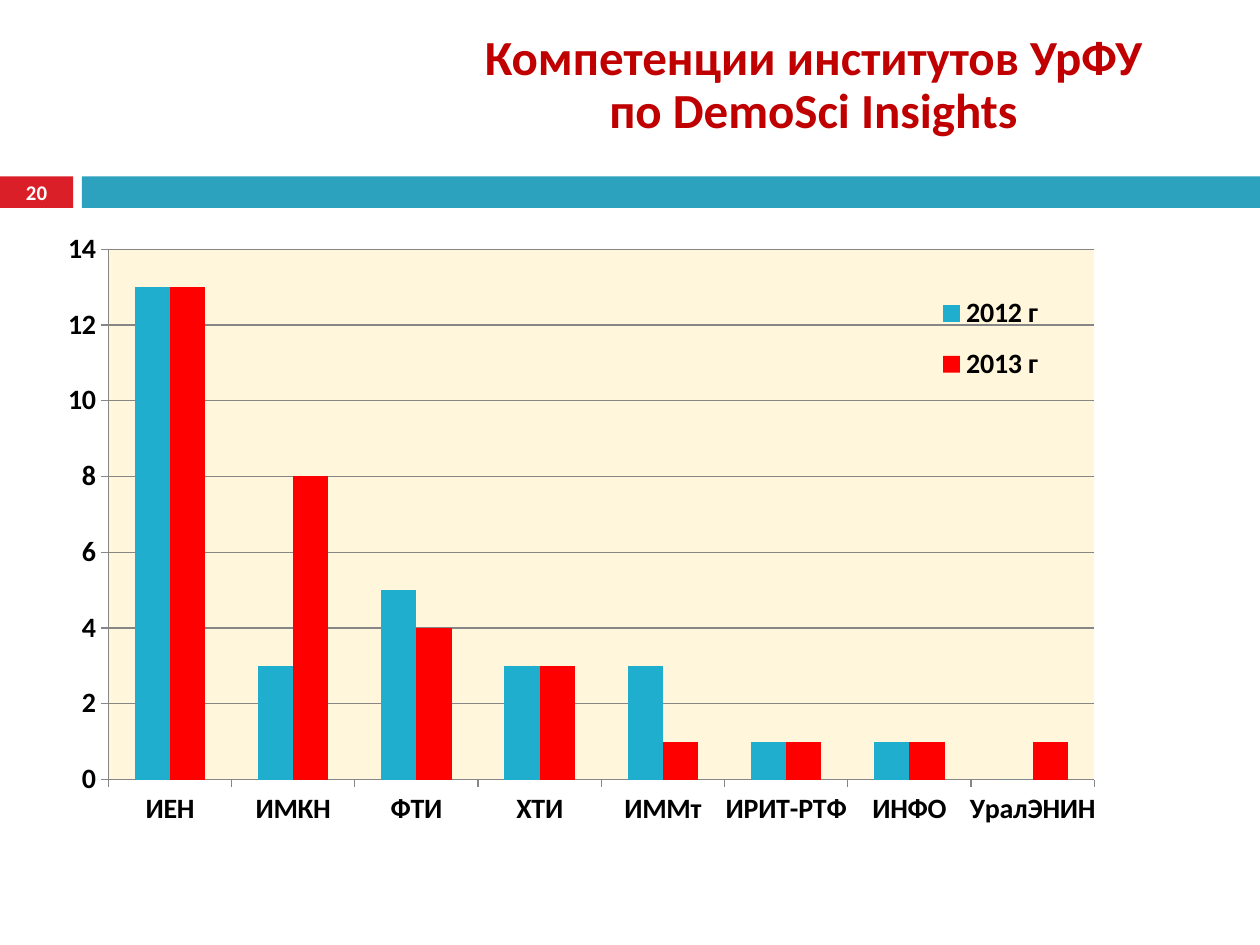
from dataclasses import dataclass

from lxml.etree import _Element as Element
from pptx import Presentation
from pptx.chart.data import CategoryChartData
from pptx.dml.color import RGBColor
from pptx.enum.chart import XL_CHART_TYPE as ChartType
from pptx.enum.chart import XL_LEGEND_POSITION as LegendPosition
from pptx.enum.chart import XL_TICK_MARK as TickMark
from pptx.enum.shapes import MSO_SHAPE as ShapeType
from pptx.enum.text import MSO_ANCHOR as Anchor
from pptx.enum.text import PP_ALIGN as Align
from pptx.oxml import parse_xml
from pptx.oxml.ns import nsdecls, qn
from pptx.util import Inches, Pt

FONT = "Calibri"
COLORS = {
    "title": "C00000",
    "number_box": "DA1F28",
    "band": "2DA2BF",
    "white": "FFFFFF",
    "black": "000000",
    "grid": "868686",
    "plot": "FFC000",
}


@dataclass
class Bar:
    left: float
    width: float
    color: str


@dataclass
class YearSeries:
    name: str
    values: tuple
    color: str


BARS = [Bar(0, 0.58, "number_box"), Bar(0.65, 9.35, "band")]
INSTITUTES = ["ИЕН", "ИМКН", "ФТИ", "ХТИ", "ИММт", "ИРИТ-РТФ", "ИНФО", "УралЭНИН"]
YEARS = [
    YearSeries("2012 г", (13, 3, 5, 3, 3, 1, 1, 0), "1FAECD"),
    YearSeries("2013 г", (13, 8, 4, 3, 1, 1, 1, 1), "FF0000"),
]


def rgb(name: str) -> RGBColor:
    return RGBColor.from_string(COLORS[name])


def style_font(font, size: float, color: str, bold: bool = True) -> None:
    font.name = FONT
    font.size = Pt(size)
    font.bold = bold
    font.color.rgb = rgb(color)


def write_text(shape, text: str, *, size: float, color: str,
               line_spacing: float = 1.0, margin: float = 0.0) -> None:
    frame = shape.text_frame
    frame.word_wrap = True
    frame.vertical_anchor = Anchor.MIDDLE
    frame.margin_left = frame.margin_right = Inches(margin)
    frame.margin_top = frame.margin_bottom = 0
    paragraph = frame.paragraphs[0]
    paragraph.alignment = Align.CENTER
    paragraph.line_spacing = line_spacing
    run = paragraph.add_run()
    run.text = text
    style_font(run.font, size, color)


def add_bar(slide, bar: Bar) -> None:
    shape = slide.shapes.add_shape(
        ShapeType.RECTANGLE, Inches(bar.left), Inches(1.4), Inches(bar.width), Inches(0.25))
    shape.shadow.inherit = False
    shape.fill.solid()
    shape.fill.fore_color.rgb = rgb(bar.color)
    shape.line.fill.background()


def set_layout(parent: Element, index: int, x: float, y: float,
               width: float, height: float, inner: bool = False) -> None:
    """Place a chart part by fractions of the chart's size."""
    for layout in parent.findall(qn("c:layout")):
        parent.remove(layout)
    target = '<c:layoutTarget val="inner"/>' if inner else ""
    parent.insert(index, parse_xml(
        f'<c:layout {nsdecls("c")}><c:manualLayout>{target}'
        '<c:xMode val="edge"/><c:yMode val="edge"/>'
        f'<c:x val="{x}"/><c:y val="{y}"/><c:w val="{width}"/><c:h val="{height}"/>'
        '</c:manualLayout></c:layout>'))


def format_axis(axis) -> None:
    axis.major_tick_mark = TickMark.OUTSIDE
    axis.minor_tick_mark = TickMark.NONE
    style_font(axis.tick_labels.font, 16, "black")
    axis.format.line.color.rgb = rgb("grid")
    axis.format.line.width = Pt(0.75)


def add_institute_chart(slide) -> None:
    data = CategoryChartData()
    data.categories = INSTITUTES
    for year in YEARS:
        data.add_series(year.name, year.values)
    chart = slide.shapes.add_chart(
        ChartType.COLUMN_CLUSTERED, Inches(0.35), Inches(1.78),
        Inches(9.45), Inches(5.51), data).chart
    chart.has_title = False
    style_font(chart.font, 10, "black", bold=False)

    plot = chart.plots[0]
    plot.gap_width = 150
    plot.overlap = 0
    plot.vary_by_categories = False
    for series, year in zip(plot.series, YEARS):
        series.format.fill.solid()
        series.format.fill.fore_color.rgb = RGBColor.from_string(year.color)

    format_axis(chart.category_axis)
    values = chart.value_axis
    format_axis(values)
    values.minimum_scale, values.maximum_scale, values.major_unit = 0, 14, 2
    values.has_major_gridlines = True
    values.major_gridlines.format.line.color.rgb = rgb("grid")
    values.major_gridlines.format.line.width = Pt(0.75)

    chart.has_legend = True
    chart.legend.position = LegendPosition.RIGHT
    chart.legend.include_in_layout = False
    style_font(chart.legend.font, 16, "black")

    plot_area = chart.element.find(".//" + qn("c:plotArea"))
    set_layout(plot_area, 0, 0.054, 0.036, 0.828, 0.764, inner=True)
    plot_area.append(parse_xml(
        f'<c:spPr {nsdecls("c", "a")}><a:solidFill><a:srgbClr val="{COLORS["plot"]}">'
        '<a:alpha val="14000"/></a:srgbClr></a:solidFill></c:spPr>'))
    legend = chart.element.find(".//" + qn("c:legend"))
    set_layout(legend, 1, 0.73, 0.08, 0.13, 0.17)


def main() -> None:
    presentation = Presentation()
    presentation.slide_width = Inches(10)
    presentation.slide_height = Inches(7.5)
    slide = presentation.slides.add_slide(presentation.slide_layouts[5])

    for bar in BARS:
        add_bar(slide, bar)

    title = slide.shapes.title
    title.left, title.top = Inches(3.58), Inches(0.13)
    title.width, title.height = Inches(5.75), Inches(1.1)
    write_text(title, "Компетенции институтов УрФУ по DemoSci Insights",
               size=28, color="title", line_spacing=0.9, margin=0.1)

    number = slide.shapes.add_textbox(Inches(0), Inches(1.39), Inches(0.58), Inches(0.27))
    write_text(number, "20", size=11.9, color="white")

    add_institute_chart(slide)
    presentation.save("out.pptx")


if __name__ == "__main__":
    main()
